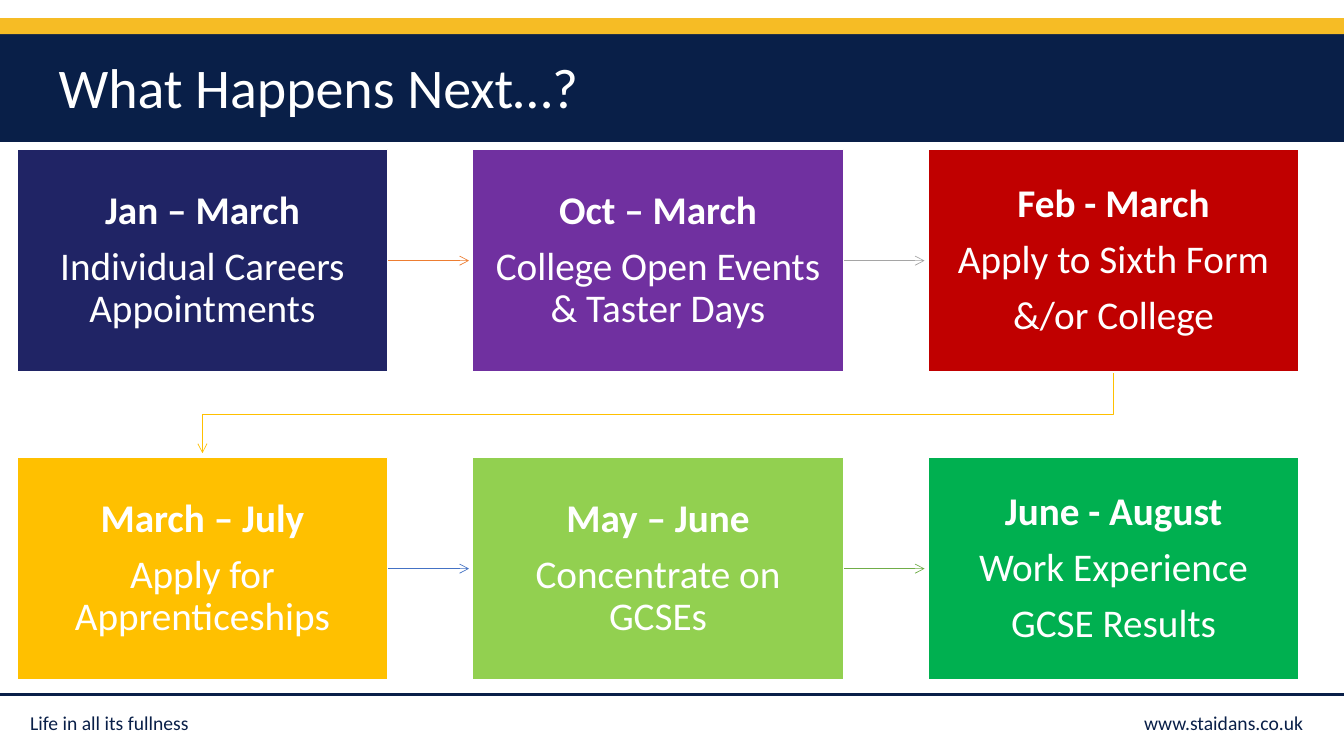
"""Build the "What Happens Next…?" timeline slide."""
from dataclasses import dataclass

from lxml.etree import SubElement
from pptx import Presentation
from pptx.dml.color import RGBColor
from pptx.enum.shapes import MSO_CONNECTOR as Connector
from pptx.enum.shapes import MSO_SHAPE as Preset
from pptx.enum.text import MSO_ANCHOR as Anchor
from pptx.enum.text import MSO_AUTO_SIZE as AutoSize
from pptx.enum.text import PP_ALIGN as Align
from pptx.oxml.ns import qn
from pptx.util import Pt

WIDTH, HEIGHT = 960, 540
NAVY, GOLD, WHITE = "091F48", "F6BC25", "FFFFFF"
COLUMNS = 3
STEP_LEFT, STEP_TOP = 12.2, 106.7
STEP_WIDTH, STEP_HEIGHT = 264.8, 159
COLUMN_PITCH, ROW_PITCH = 325.4, 220
ARROW_LENGTH = 58


@dataclass(frozen=True)
class Step:
    period: str
    actions: tuple[str, ...]
    fill: str
    arrow: str | None


@dataclass(frozen=True)
class Band:
    top: float
    height: float
    fill: str


@dataclass(frozen=True)
class Footer:
    text: str
    left: float
    width: float
    align: Align


STEPS = (
    Step("Jan – March", ("Individual Careers Appointments",), "202465", "ED7D31"),
    Step("Oct – March", ("College Open Events & Taster Days",), "7030A0", "A5A5A5"),
    Step("Feb - March", ("Apply to Sixth Form", "&/or College"), "C00000", "FFC000"),
    Step("March – July", ("Apply for Apprenticeships",), "FFC000", "4472C4"),
    Step("May – June", ("Concentrate on GCSEs",), "92D050", "70AD47"),
    Step("June - August", ("Work Experience", "GCSE Results"), "00B050", None),
)
BANDS = (Band(24.5, 77, NAVY), Band(13, 11.5, GOLD))
FOOTERS = (
    Footer("www.staidans.co.uk", 774, 164, Align.RIGHT),
    Footer("Life in all its fullness", 14.4, 176, Align.LEFT),
)


def colour(value: str) -> RGBColor:
    return RGBColor.from_string(value)


def apply(target, formats: dict) -> None:
    for name, value in formats.items():
        setattr(target, name, value)


def write(paragraph, text: str, size: float, ink: str, bold: bool = False) -> None:
    span = paragraph.add_run()
    span.text = text
    apply(span.font, {"name": "Calibri", "size": Pt(size), "bold": bold})
    span.font.color.rgb = colour(ink)


def style_line(shape, ink: str, width: float, arrow: bool = False) -> None:
    shape.line.color.rgb = colour(ink)
    shape.line.width = Pt(width)
    if arrow:
        SubElement(shape.line._get_or_add_ln(), qn("a:tailEnd"), type="arrow")


def add_rectangle(page, left: float, top: float, width: float, height: float, fill: str):
    box = page.shapes.add_shape(Preset.RECTANGLE, Pt(left), Pt(top), Pt(width), Pt(height))
    box.shadow.inherit = False
    box.fill.solid()
    box.fill.fore_color.rgb = colour(fill)
    box.line.fill.background()
    return box


def add_straight(page, start: tuple, end: tuple, ink: str, width: float, arrow: bool = False) -> None:
    line = page.shapes.add_connector(Connector.STRAIGHT, *map(Pt, start + end))
    SubElement(line.element.spPr, qn("a:effectLst"))
    style_line(line, ink, width, arrow)


def add_turn(page, points: list, ink: str) -> None:
    corners = [(Pt(x), Pt(y)) for x, y in points]
    builder = page.shapes.build_freeform(*corners[0])
    builder.add_line_segments(corners[1:], close=False)
    turn = builder.convert_to_shape()
    turn.shadow.inherit = False
    turn.fill.background()
    style_line(turn, ink, 0.5, arrow=True)


def add_footer(page, footer: Footer) -> None:
    box = page.shapes.add_textbox(Pt(footer.left), Pt(502), Pt(footer.width), Pt(29))
    apply(box.text_frame, {"word_wrap": True, "vertical_anchor": Anchor.MIDDLE})
    para = box.text_frame.paragraphs[0]
    para.alignment = footer.align
    write(para, footer.text, 14, NAVY)


def add_step(page, step: Step, index: int) -> None:
    row, column = divmod(index, COLUMNS)
    left = STEP_LEFT + column * COLUMN_PITCH
    top = STEP_TOP + row * ROW_PITCH
    right, bottom = left + STEP_WIDTH, top + STEP_HEIGHT
    middle = top + STEP_HEIGHT / 2

    if step.arrow and column < COLUMNS - 1:
        add_straight(page, (right, middle), (right + ARROW_LENGTH, middle), step.arrow, 0.5, True)
    elif step.arrow:
        start_x, end_x = left + STEP_WIDTH / 2, STEP_LEFT + STEP_WIDTH / 2
        turn_y = bottom + 30.4
        add_turn(page, [(start_x, bottom), (start_x, turn_y), (end_x, turn_y),
                        (end_x, bottom + ARROW_LENGTH)], step.arrow)

    box = add_rectangle(page, left, top, STEP_WIDTH, STEP_HEIGHT, step.fill)
    style_line(box, WHITE, 1)
    frame = box.text_frame
    apply(frame, {"word_wrap": True, "vertical_anchor": Anchor.MIDDLE})
    apply(frame, {f"margin_{side}": Pt(15.7) for side in ("left", "top", "right", "bottom")})
    for number, text in enumerate((step.period, *step.actions)):
        para = frame.add_paragraph() if number else frame.paragraphs[0]
        apply(para, {"alignment": Align.CENTER, "line_spacing": 0.9, "space_after": Pt(9.8)})
        write(para, text, 28, WHITE, bold=number == 0)


def place_title(page, text: str) -> None:
    title = page.shapes.title
    apply(title, {"left": Pt(34.6), "top": Pt(26), "width": Pt(742), "height": Pt(77)})
    apply(title.text_frame, {"word_wrap": True, "auto_size": AutoSize.NONE,
                             "vertical_anchor": Anchor.MIDDLE})
    para = title.text_frame.paragraphs[0]
    apply(para, {"alignment": Align.LEFT, "line_spacing": 0.9})
    write(para, text, 40, WHITE)
    title.element.getparent().append(title.element)


def main() -> None:
    deck = Presentation()
    apply(deck, {"slide_width": Pt(WIDTH), "slide_height": Pt(HEIGHT)})
    page = deck.slides.add_slide(deck.slide_layouts.get_by_name("Title Only"))
    add_straight(page, (0, 496), (WIDTH, 496), NAVY, 2.25)
    for band in BANDS:
        add_rectangle(page, 0, band.top, WIDTH, band.height, band.fill)
    for footer in FOOTERS:
        add_footer(page, footer)
    for index, step in enumerate(STEPS):
        add_step(page, step, index)
    place_title(page, "What Happens Next…?")
    deck.save("out.pptx")


if __name__ == "__main__":
    main()
